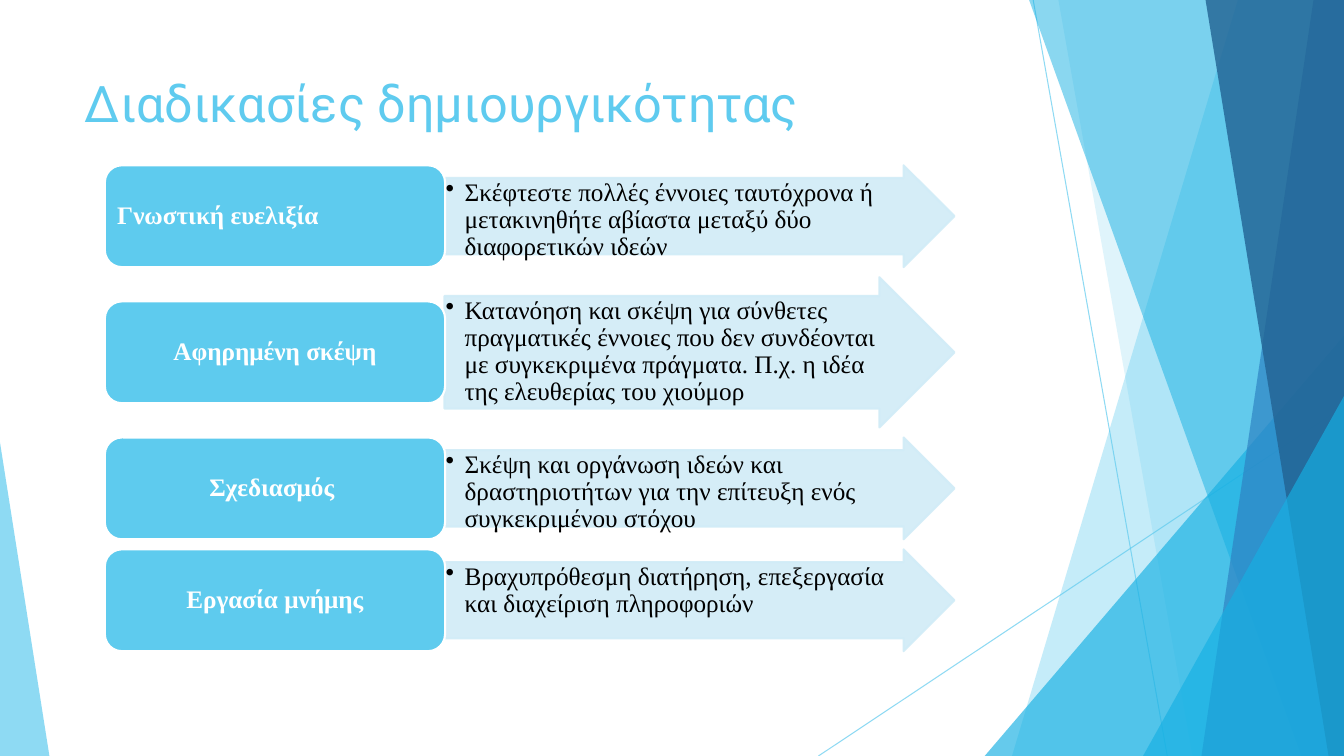
"""Builds a slide on the processes of creativity, with four labelled arrows."""
from lxml import etree
from pptx import Presentation
from pptx.dml.color import RGBColor
from pptx.enum.shapes import MSO_CONNECTOR, MSO_SHAPE
from pptx.enum.text import MSO_ANCHOR, MSO_AUTO_SIZE, PP_ALIGN
from pptx.oxml.ns import qn
from pptx.util import Pt

ARROW, ROUNDED, TRIANGLE = MSO_SHAPE.RIGHT_ARROW, MSO_SHAPE.ROUNDED_RECTANGLE, MSO_SHAPE.ISOSCELES_TRIANGLE
STRAIGHT = MSO_CONNECTOR.STRAIGHT
TOP, MIDDLE = MSO_ANCHOR.TOP, MSO_ANCHOR.MIDDLE
LEFT, CENTER = PP_ALIGN.LEFT, PP_ALIGN.CENTER
NO_FIT = MSO_AUTO_SIZE.NONE

SKY = RGBColor(0x5F, 0xCB, 0xEF)
BOX_BLUE = RGBColor(0x5E, 0xCB, 0xEE)
PALE = RGBColor(0xD1, 0xEC, 0xF7)
CYAN = RGBColor(0x16, 0xB0, 0xE3)
BLUE = RGBColor(0x2E, 0x83, 0xC3)
NAVY = RGBColor(0x22, 0x62, 0x92)
WHITE = RGBColor(0xFF, 0xFF, 0xFF)
BLACK = RGBColor(0, 0, 0)

TITLE_FONT, BODY_FONT = "Roboto", "Times New Roman"
WIDTH, HEIGHT = 960, 540
BOX_LEFT, BOX_WIDTH, BOX_HEIGHT = 74.9, 243, 72.7
ARROW_LEFT, ARROW_WIDTH = 317.5, 364.3
FIRST_TOP, ROW_GAP = 118.1, 7.2
TALL_ROW = 107.3

PROCESSES = [
    ("Γνωστική ευελιξία", LEFT, BOX_HEIGHT,
     "Σκέφτεστε πολλές έννοιες ταυτόχρονα ή μετακινηθήτε αβίαστα μεταξύ δύο διαφορετικών ιδεών"),
    ("Αφηρημένη σκέψη", CENTER, TALL_ROW,
     "Κατανόηση και σκέψη για σύνθετες πραγματικές έννοιες που δεν συνδέονται "
     "με συγκεκριμένα πράγματα. Π.χ. η ιδέα της ελευθερίας του χιούμορ"),
    ("Σχεδιασμός ", CENTER, BOX_HEIGHT,
     "Σκέψη και οργάνωση ιδεών και δραστηριοτήτων για την επίτευξη ενός συγκεκριμένου στόχου"),
    ("Εργασία μνήμης", CENTER, BOX_HEIGHT,
     "Βραχυπρόθεσμη διατήρηση, επεξεργασία και διαχείριση πληροφοριών"),
]


def set_opacity(color_format, color, percent):
    """Colours a fill or line and makes it partly transparent."""
    color_format.solid()
    color_format.fore_color.rgb = color
    for srgb in color_format._xPr.iter(qn("a:srgbClr")):
        if srgb.getparent().getparent() is color_format._xPr:
            etree.SubElement(srgb, qn("a:alpha"), val=str(percent * 1000))


def add_ray(slide, start, end):
    """Draws a thin decorative line."""
    ray = slide.shapes.add_connector(STRAIGHT, *map(Pt, start + end))
    ray.line.width = Pt(0.75)
    set_opacity(ray.line.fill, SKY, 70)
    etree.SubElement(ray._element.spPr, qn("a:effectLst"))


def style_facet(facet, color, opacity):
    """Gives a decorative area its see-through fill and no outline."""
    facet.shadow.inherit = False
    set_opacity(facet.fill, color, opacity)
    facet.line.fill.background()


def add_band(slide, top_left, bottom_left, color, opacity):
    """Draws a slanted band that reaches the right edge of the slide."""
    builder = slide.shapes.build_freeform(Pt(top_left), 0)
    corners = [(WIDTH, 0), (WIDTH, HEIGHT), (bottom_left, HEIGHT)]
    builder.add_line_segments([(Pt(x), Pt(y)) for x, y in corners])
    style_facet(builder.convert_to_shape(), color, opacity)


def add_corner(slide, left, top, width, apex, color, opacity):
    """Draws a right triangle standing on the bottom edge of the slide."""
    corner = slide.shapes.add_shape(TRIANGLE, Pt(left), Pt(top), Pt(width), Pt(HEIGHT - top))
    corner.adjustments[0] = apex
    style_facet(corner, color, opacity)


def add_backdrop(slide):
    """Draws the faceted decoration from back to front."""
    add_ray(slide, (738, 0), (833.8, HEIGHT))
    add_ray(slide, (WIDTH, 290.2), (584.6, HEIGHT))
    add_band(slide, 884.2, 722.9, SKY, 36)
    add_band(slide, 756, 851.8, SKY, 20)
    add_corner(slide, 703.4, 239.8, 256.6, 1, CYAN, 66)
    add_band(slide, 735.1, 929.5, CYAN, 50)
    add_band(slide, 938.2, 858.2, BLUE, 70)
    add_band(slide, 861.1, 949, NAVY, 80)
    add_corner(slide, 816.5, 283, 143.5, 1, CYAN, 66)
    add_corner(slide, 0, 316.1, 35.3, 0, SKY, 70)


def write_text(shape, text, color, font, size, anchor, align, insets):
    """Writes one paragraph into a shape and returns it."""
    frame = shape.text_frame
    frame.text = text
    frame.word_wrap = True
    frame.auto_size = NO_FIT
    frame.vertical_anchor = anchor
    frame.margin_left = frame.margin_right = Pt(insets[0])
    frame.margin_top = frame.margin_bottom = Pt(insets[1])
    paragraph = frame.paragraphs[0]
    paragraph.alignment = align
    run_font = paragraph.runs[0].font
    run_font.name, run_font.size = font, Pt(size)
    run_font.color.rgb = color
    return paragraph


def add_bullet(paragraph):
    """Hangs a black bullet before the paragraph."""
    paragraph.level = 1
    properties = paragraph._p.get_or_add_pPr()
    properties.set("marL", str(Pt(13.5)))
    properties.set("indent", str(-Pt(13.5)))
    bullet_color = etree.SubElement(properties, qn("a:buClr"))
    etree.SubElement(bullet_color, qn("a:srgbClr"), val=str(BLACK))
    etree.SubElement(properties, qn("a:buChar"), char="•")


def add_description(slide, top, height, text):
    """Draws the pale arrow with its bulleted description."""
    arrow = slide.shapes.add_shape(ARROW, Pt(ARROW_LEFT), Pt(top), Pt(ARROW_WIDTH), Pt(height))
    arrow.adjustments[0], arrow.adjustments[1] = 0.75, 0.5
    arrow.shadow.inherit = False
    set_opacity(arrow.fill, PALE, 90)
    arrow.line.width = Pt(1.5)
    set_opacity(arrow.line.fill, PALE, 90)
    paragraph = write_text(arrow, text, BLACK, BODY_FONT, 18, TOP, LEFT, (0.9, 0.9))
    paragraph.line_spacing = 0.9
    add_bullet(paragraph)


def add_label(slide, top, text, align):
    """Draws the rounded box that names a process."""
    box = slide.shapes.add_shape(ROUNDED, Pt(BOX_LEFT), Pt(top), Pt(BOX_WIDTH), Pt(BOX_HEIGHT))
    box.shadow.inherit = False
    box.fill.solid()
    box.fill.fore_color.rgb = BOX_BLUE
    box.line.color.rgb = WHITE
    box.line.width = Pt(1.5)
    paragraph = write_text(box, text, WHITE, BODY_FONT, 18, MIDDLE, align, (5.3, 2.7))
    paragraph.line_spacing = 0.9
    paragraph.runs[0].font.bold = True


def add_title(slide):
    """Places and formats the slide title."""
    title = slide.shapes.title
    title.left, title.top, title.width, title.height = map(Pt, (53.3, 48, 677, 104))
    write_text(title, "Διαδικασίες δημιουργικότητας", SKY, TITLE_FONT, 36, TOP, LEFT, (7.2, 3.6))


def main():
    """Builds and saves the slide."""
    deck = Presentation()
    deck.slide_width, deck.slide_height = Pt(WIDTH), Pt(HEIGHT)
    slide = deck.slides.add_slide(deck.slide_layouts[5])
    add_backdrop(slide)
    add_title(slide)
    top = FIRST_TOP
    for name, align, height, description in PROCESSES:
        add_description(slide, top, height, description)
        add_label(slide, top + (height - BOX_HEIGHT) / 2, name, align)
        top += height + ROW_GAP
    deck.save("out.pptx")


if __name__ == "__main__":
    main()
